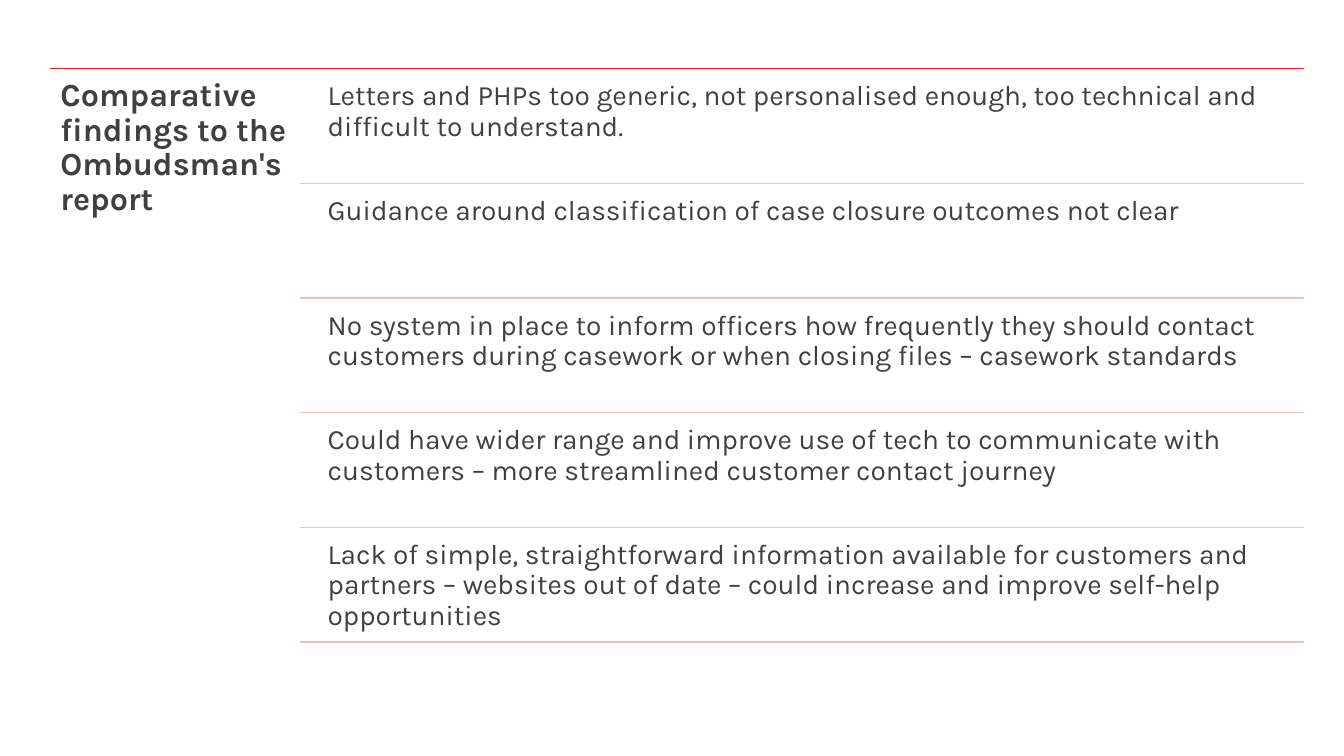
from pptx import Presentation
from pptx.dml.color import RGBColor
from pptx.enum.shapes import MSO_CONNECTOR
from pptx.enum.text import MSO_ANCHOR, MSO_AUTO_SIZE, PP_ALIGN
from pptx.oxml.ns import qn
from pptx.util import Inches, Pt
from lxml import etree

TITLE = "Comparative findings to the Ombudsman's report"
FINDINGS = [
    "Letters and PHPs too generic, not personalised enough, too technical and difficult to understand.",
    "Guidance around classification of case closure outcomes not clear",
    "No system in place to inform officers how frequently they should contact customers "
    "during casework or when closing files – casework standards",
    "Could have wider range and improve use of tech to communicate with customers "
    "– more streamlined customer contact journey",
    "Lack of simple, straightforward information available for customers and partners "
    "– websites out of date – could increase and improve self-help opportunities",
]
COLORS = {"text": "404041", "rule": "EB2227", "pale": "F5BDBE"}
FONT = "Karla"

STRAIGHT = MSO_CONNECTOR.STRAIGHT
TOP = MSO_ANCHOR.TOP
NO_FIT = MSO_AUTO_SIZE.NONE
LEFT = PP_ALIGN.LEFT

# Lengths in inches
EDGE, RIGHT = 0.5, 12.93
START, END = 0.68, 6.37
RULE_X, TEXT_X = 2.98, 3.17
GAP = 0.05
ROW = (END - START) / len(FINDINGS)


def color(name):
    return RGBColor.from_string(COLORS[name])


def add_rule(slide, left, y, name):
    rule = slide.shapes.add_connector(
        STRAIGHT, Inches(left), Inches(y), Inches(RIGHT), Inches(y))
    rule.line.color.rgb = color(name)
    rule.line.width = Pt(1)
    props = rule._element.find(qn("p:spPr"))
    etree.SubElement(props, qn("a:effectLst"))


def set_text(shape, text, size, inset, bold=False):
    frame = shape.text_frame
    frame.text = text
    frame.word_wrap = True
    frame.auto_size = NO_FIT
    frame.vertical_anchor = TOP
    frame.margin_left = frame.margin_right = Inches(inset)
    frame.margin_top = frame.margin_bottom = Inches(inset)
    para = frame.paragraphs[0]
    para.alignment = LEFT
    para.line_spacing = 0.9
    para.font.name = FONT
    para.font.size = Pt(size)
    para.font.bold = bold
    para.font.color.rgb = color("text")


def main():
    deck = Presentation()
    deck.slide_width, deck.slide_height = Inches(13.33), Inches(7.5)
    slide = deck.slides.add_slide(deck.slide_layouts[5])

    add_rule(slide, EDGE, START, "rule")
    title = slide.shapes.title
    title.left, title.top = Inches(EDGE), Inches(START)
    title.width, title.height = Inches(2.49), Inches(5.75)
    set_text(title, TITLE, 23, 0.1, bold=True)

    for i, finding in enumerate(FINDINGS):
        y = START + i * ROW
        box = slide.shapes.add_textbox(
            Inches(TEXT_X), Inches(y + GAP), Inches(RIGHT - TEXT_X), Inches(ROW - GAP))
        set_text(box, finding, 20, 0.08)
        add_rule(slide, RULE_X, y + ROW, "pale")

    deck.save("out.pptx")


if __name__ == "__main__":
    main()
